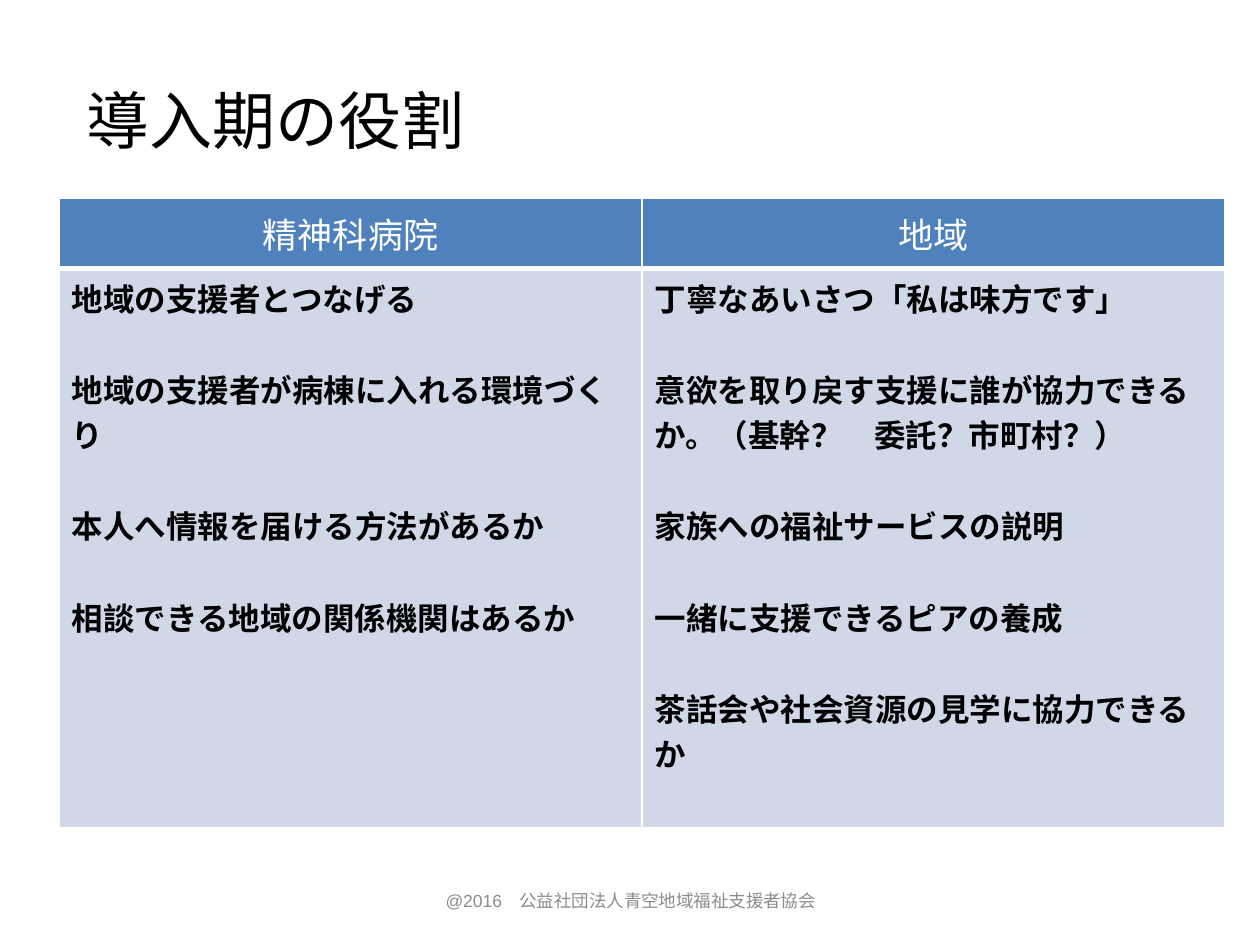
from dataclasses import dataclass

from lxml import etree
from pptx import Presentation
from pptx.dml.color import RGBColor
from pptx.enum.text import MSO_ANCHOR, PP_ALIGN
from pptx.oxml.ns import qn
from pptx.util import Inches, Pt

LEFT, CENTER = PP_ALIGN.LEFT, PP_ALIGN.CENTER
TOP, MIDDLE = MSO_ANCHOR.TOP, MSO_ANCHOR.MIDDLE


@dataclass(frozen=True)
class Theme:
    """Colours, fonts and type sizes of the slide."""
    ink: str = "000000"
    white: str = "FFFFFF"
    gray: str = "8C8C8C"
    blue: str = "4F81BD"
    pale: str = "D0D8E8"
    sans: str = "Noto Sans CJK JP"
    latin: str = "Arial"
    title: int = 36
    head: int = 20
    body: int = 18
    foot: int = 10
    gap: int = 26
    thin: int = 1
    thick: int = 3


THEME = Theme()

HEADS = ["精神科病院", "地域"]
ROLES = [
    [
        "地域の支援者とつなげる",
        "地域の支援者が病棟に入れる環境づくり",
        "本人へ情報を届ける方法があるか",
        "相談できる地域の関係機関はあるか",
    ],
    [
        "丁寧なあいさつ「私は味方です」",
        "意欲を取り戻す支援に誰が協力できるか。（基幹？　委託？市町村？）",
        "家族への福祉サービスの説明",
        "一緒に支援できるピアの養成",
        "茶話会や社会資源の見学に協力できるか",
    ],
]


def add_run(para, text, size, color, font=THEME.sans, bold=False):
    """Add one styled run to a paragraph."""
    run = para.add_run()
    run.text = text
    run.font.size = Pt(size)
    run.font.bold = bold
    run.font.name = font
    run.font.color.rgb = RGBColor.from_string(color)
    east = etree.SubElement(run.font._element, qn("a:ea"))
    east.set("typeface", THEME.sans)


def add_label(slide, box, text, size, color, align, font=THEME.sans):
    """Place a wrapped, vertically centred line of text in a box."""
    frame = slide.shapes.add_textbox(*map(Inches, box)).text_frame
    frame.word_wrap = True
    frame.vertical_anchor = MIDDLE
    para = frame.paragraphs[0]
    para.alignment = align
    add_run(para, text, size, color, font)


def set_edges(cell, widths):
    """Draw white cell edges in left, right, top, bottom order."""
    props = cell._tc.get_or_add_tcPr()
    for index, (side, width) in enumerate(zip("LRTB", widths)):
        line = etree.Element(qn(f"a:ln{side}"), w=str(Pt(width)))
        fill = etree.SubElement(line, qn("a:solidFill"))
        etree.SubElement(fill, qn("a:srgbClr"), val=THEME.white)
        props.insert(index, line)


def fill_cell(cell, lines, size, color, fill, align, anchor, bold=False):
    """Fill a cell with evenly spaced paragraphs."""
    cell.fill.solid()
    cell.fill.fore_color.rgb = RGBColor.from_string(fill)
    cell.vertical_anchor = anchor
    frame = cell.text_frame
    for index, text in enumerate(lines):
        para = frame.add_paragraph() if index else frame.paragraphs[0]
        para.alignment = align
        if index:
            para.space_before = Pt(THEME.gap)
        add_run(para, text, size, color, bold=bold)


def add_roles(slide, box, head=0.56):
    """Place the table of roles, one column for each setting."""
    left, top, width, height = box
    table = slide.shapes.add_table(2, len(HEADS), *map(Inches, box)).table
    table.horz_banding = False
    for row, size in zip(table.rows, (head, height - head)):
        row.height = Inches(size)
    thin, thick = THEME.thin, THEME.thick
    for index, (name, roles) in enumerate(zip(HEADS, ROLES)):
        table.columns[index].width = Inches(width / len(HEADS))
        upper, lower = table.cell(0, index), table.cell(1, index)
        fill_cell(upper, [name], THEME.head, THEME.white, THEME.blue,
                  CENTER, MIDDLE)
        fill_cell(lower, roles, THEME.body, THEME.ink, THEME.pale,
                  LEFT, TOP, bold=True)
        set_edges(upper, (thin, thin, thin, thick))
        set_edges(lower, (thin, thin, thick, thin))


def main():
    """Build and save the slide."""
    deck = Presentation()
    deck.slide_width, deck.slide_height = Inches(10), Inches(7.5)
    slide = deck.slides.add_slide(deck.slide_layouts[6])
    add_label(slide, (0.59, 0.59, 9, 0.72), "導入期の役割",
              THEME.title, THEME.ink, LEFT)
    add_roles(slide, (0.47, 1.57, 9.25, 5))
    add_label(slide, (3.42, 6.95, 3.17, 0.4),
              "@2016　公益社団法人青空地域福祉支援者協会",
              THEME.foot, THEME.gray, CENTER, THEME.latin)
    deck.save("out.pptx")


if __name__ == "__main__":
    main()
